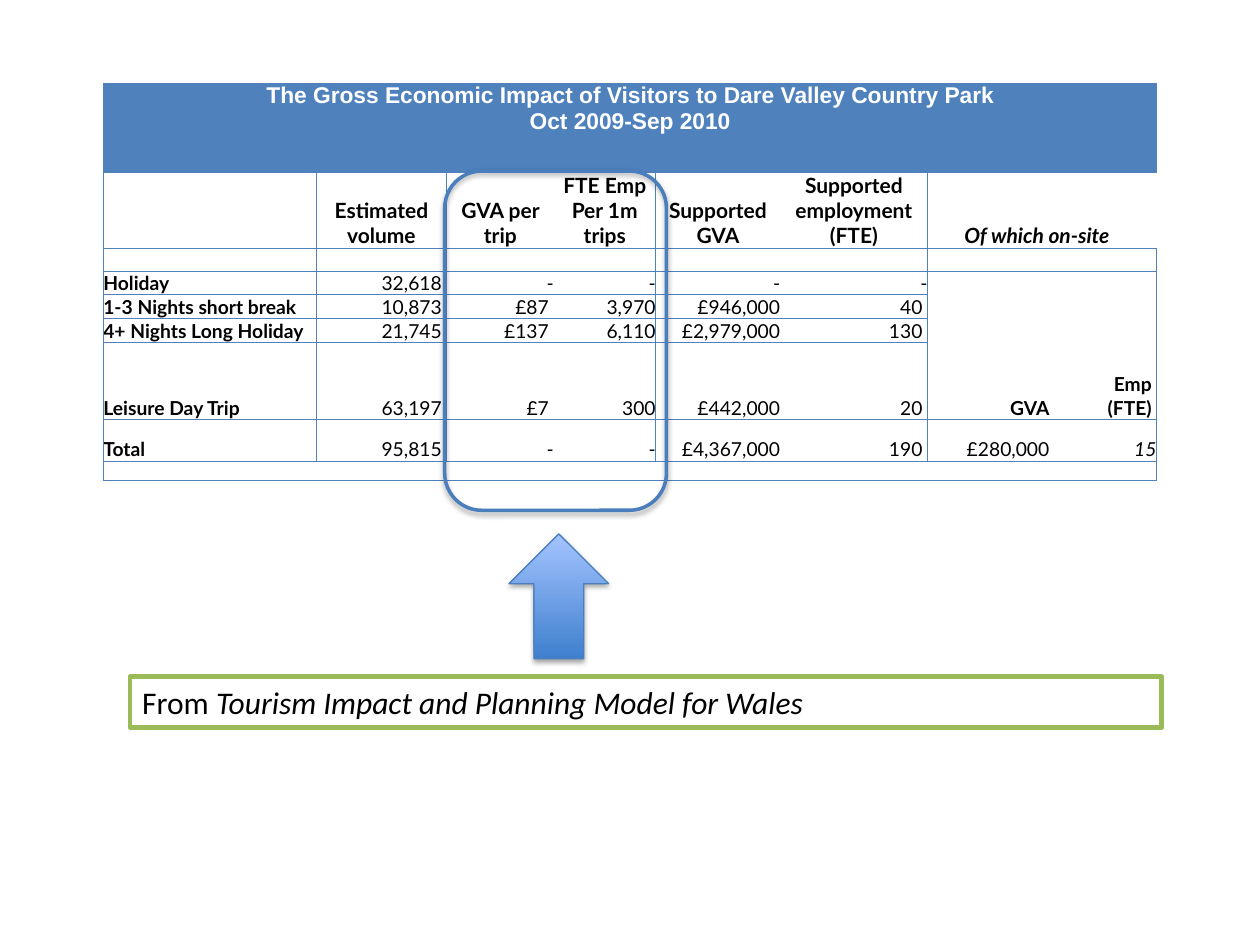
from lxml.etree import SubElement
from pptx import Presentation
from pptx.dml.color import RGBColor
from pptx.enum.shapes import MSO_SHAPE as Shape
from pptx.enum.text import MSO_ANCHOR as Anchor, PP_ALIGN as Align
from pptx.oxml.ns import qn
from pptx.util import Inches, Pt

BLUE = RGBColor(0x4F, 0x81, 0xBD)
OUTLINE = RGBColor(0x4B, 0x7E, 0xBC)
ARROW_DARK = RGBColor(0x3F, 0x80, 0xCE)
ARROW_LIGHT = RGBColor(0xA4, 0xC4, 0xFF)
GREEN = RGBColor(0x9B, 0xBB, 0x59)
BLACK = RGBColor(0, 0, 0)
WHITE = RGBColor(0xFF, 0xFF, 0xFF)

PAGE_W, PAGE_H = Inches(10), Inches(7.5)
PLAIN_STYLE = "{2D5ABB26-0587-4C30-8999-92F81FD0307C}"

# Relative widths and heights of the table's columns and rows
COLUMNS = [1.69, 1.04, 0.85, 0.81, 0.99, 1.17, 0.97, 0.85]
ROWS = [0.71, 0.6, 0.18, 0.19, 0.19, 0.19, 0.61, 0.33, 0.15]
TITLE_ROW, HEADER_ROW, FIRST_DATA_ROW, LAST_ROW = 0, 1, 3, 8
RULED_COLUMNS = (0, 1, 3, 5, 7)
ON_SITE = (6, 7)

TITLE = "The Gross Economic Impact of Visitors to Dare Valley Country Park\nOct 2009-Sep 2010"
HEADERS = ["", "Estimated volume", "GVA per trip", "FTE Emp Per 1m trips",
           "Supported GVA", "Supported employment (FTE)", "Of which on-site"]
DATA = [
    ["Holiday", "32,618 ", "-", "-", "-", "-", "GVA", "Emp \n(FTE)\u00a0".replace("\u00a0", " ")],
    ["1-3 Nights short break", "10,873 ", "£87 ", "3,970", "£946,000", "40 "],
    ["4+ Nights Long Holiday", "21,745 ", "£137 ", "6,110", "£2,979,000", "130 "],
    ["Leisure Day Trip", "63,197 ", "£7 ", "300", "£442,000", "20 "],
    ["Total", "95,815 ", "-", "-", "£4,367,000", "190 ", "£280,000", "15"],
]


def share(left, top, width, height):
    """Turn percentages of the slide into a box."""
    return (int(PAGE_W * left / 100), int(PAGE_H * top / 100),
            int(PAGE_W * width / 100), int(PAGE_H * height / 100))


def write(cell, text, size, align, font="Lato", color=BLACK, bold=False, italic=False):
    cell.text = text
    for para in cell.text_frame.paragraphs:
        para.alignment = align
        for style in [para.font] + [span.font for span in para.runs]:
            style.name, style.size = font, Pt(size)
            style.bold, style.italic = bold, italic
            style.color.rgb = color


def cell_sides(row, col):
    """Name the sides of a cell that carry a line."""
    sides = []
    if col == 0:
        sides.append("L")
    if row == LAST_ROW:
        ruled = col == ON_SITE[1]
    else:
        ruled = col in RULED_COLUMNS and (row, col) != (HEADER_ROW, ON_SITE[1])
    if ruled:
        sides.append("R")
    in_block = col in ON_SITE and FIRST_DATA_ROW <= row < LAST_ROW - 1
    if not in_block or row == FIRST_DATA_ROW:
        sides.append("T")
    if not in_block or row == LAST_ROW - 2:
        sides.append("B")
    return sides


def format_cell(cell, row, col):
    cell.margin_left = cell.margin_right = cell.margin_top = cell.margin_bottom = 0
    cell.vertical_anchor = Anchor.TOP if row == TITLE_ROW else Anchor.BOTTOM
    props = cell._tc.get_or_add_tcPr()
    for side in cell_sides(row, col):
        line = SubElement(props, qn(f"a:ln{side}"), w=str(Pt(0.5)))
        SubElement(SubElement(line, qn("a:solidFill")), qn("a:srgbClr"), val=str(BLUE))
    if row == TITLE_ROW:
        cell.fill.solid()
        cell.fill.fore_color.rgb = BLUE
    else:
        cell.fill.background()
    if not cell.text:
        end = cell.text_frame.paragraphs[0]._p.get_or_add_endParaRPr()
        end.set("sz", "800")


def add_impact_table(page, box):
    left, top, width, height = box
    table = page.shapes.add_table(len(ROWS), len(COLUMNS), *box).table
    table.first_row = table.horz_banding = False
    table._tbl.tblPr.find(qn("a:tableStyleId")).text = PLAIN_STYLE
    for column, part in zip(table.columns, COLUMNS):
        column.width = int(width * part / sum(COLUMNS))
    for row, part in zip(table.rows, ROWS):
        row.height = int(height * part / sum(ROWS))

    table.cell(TITLE_ROW, 0).merge(table.cell(TITLE_ROW, len(COLUMNS) - 1))
    table.cell(HEADER_ROW, ON_SITE[0]).merge(table.cell(HEADER_ROW, ON_SITE[1]))
    for col in ON_SITE:
        table.cell(FIRST_DATA_ROW, col).merge(table.cell(LAST_ROW - 2, col))

    write(table.cell(TITLE_ROW, 0), TITLE, 13, Align.CENTER, "Arial", WHITE, bold=True)
    for col, text in enumerate(HEADERS):
        if text:
            on_site = col == ON_SITE[0]
            write(table.cell(HEADER_ROW, col), text, 12,
                  Align.LEFT if on_site else Align.CENTER, bold=True, italic=on_site)
    for row, values in enumerate(DATA, FIRST_DATA_ROW):
        for col, text in enumerate(values):
            heading = col == 0 or (row == FIRST_DATA_ROW and col in ON_SITE)
            write(table.cell(row, col), text, 11, Align.RIGHT if col else Align.LEFT,
                  bold=heading, italic=text == "15")

    for row in range(len(ROWS)):
        for col in range(len(COLUMNS)):
            format_cell(table.cell(row, col), row, col)
    table.cell(HEADER_ROW, ON_SITE[0]).margin_left = int(width * 0.035)


def add_outlined(page, kind, box, color, weight):
    shape = page.shapes.add_shape(kind, *box)
    shape.shadow.inherit = False
    shape.fill.background()
    shape.line.color.rgb = color
    shape.line.width = Pt(weight)
    return shape


def add_soft_shadow(shape):
    effects = shape._element.spPr.find(qn("a:effectLst"))
    shadow = SubElement(effects, qn("a:outerShdw"), blurRad=str(Pt(3.1)), dist=str(Pt(1.8)),
                        dir="5400000", rotWithShape="0")
    color = SubElement(shadow, qn("a:srgbClr"), val=str(BLACK))
    SubElement(color, qn("a:alpha"), val="35000")


def add_arrow(page, box):
    arrow = add_outlined(page, Shape.UP_ARROW, box, OUTLINE, 0.75)
    arrow.fill.gradient()
    arrow.fill.gradient_angle = 90
    for stop, color in zip(arrow.fill.gradient_stops, (ARROW_DARK, ARROW_LIGHT)):
        stop.color.rgb = color
    add_soft_shadow(arrow)


def add_highlight(page, box):
    add_soft_shadow(add_outlined(page, Shape.ROUNDED_RECTANGLE, box, OUTLINE, 2))


def add_source_note(page, box):
    note = add_outlined(page, Shape.RECTANGLE, box, GREEN, 2.5)
    frame = note.text_frame
    frame.word_wrap = True
    frame.vertical_anchor = Anchor.TOP
    para = frame.paragraphs[0]
    para.alignment = Align.LEFT
    for text, italic in (("From ", False),
                         ("Tourism Impact and Planning Model for Wales", True)):
        span = para.add_run()
        span.text = text
        span.font.name, span.font.size = "Calibri", Pt(18)
        span.font.italic = italic
        span.font.color.rgb = BLACK


def main():
    deck = Presentation()
    deck.slide_width, deck.slide_height = PAGE_W, PAGE_H
    page = deck.slides.add_slide(deck.slide_layouts[6])
    add_impact_table(page, share(8.2, 8.8, 83.6, 42))
    add_arrow(page, share(40.4, 56.5, 7.9, 13.2))
    add_highlight(page, share(35.3, 18.1, 17.6, 35.9))
    add_source_note(page, share(10.3, 71.6, 81.9, 5.4))
    deck.save("out.pptx")


if __name__ == "__main__":
    main()
